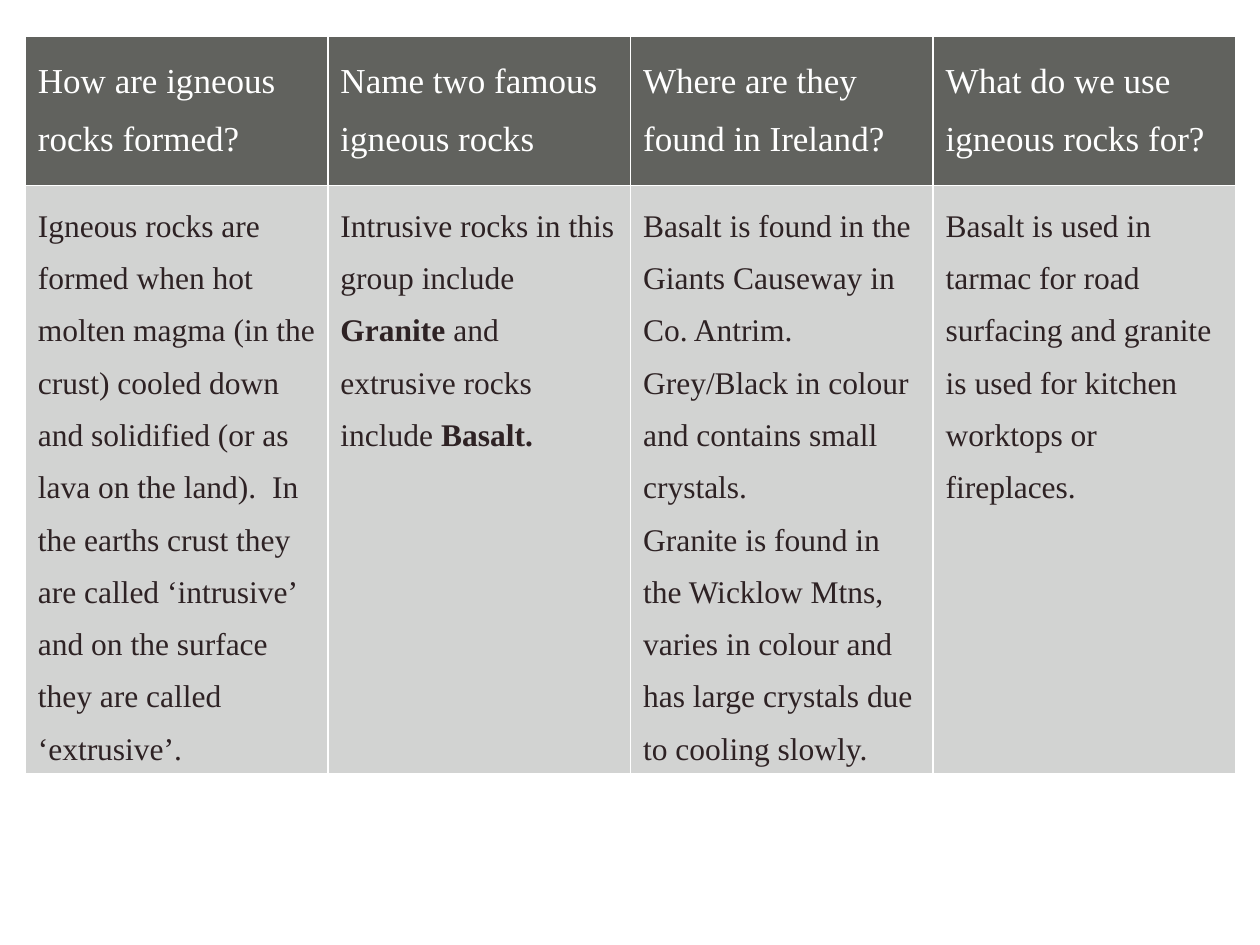
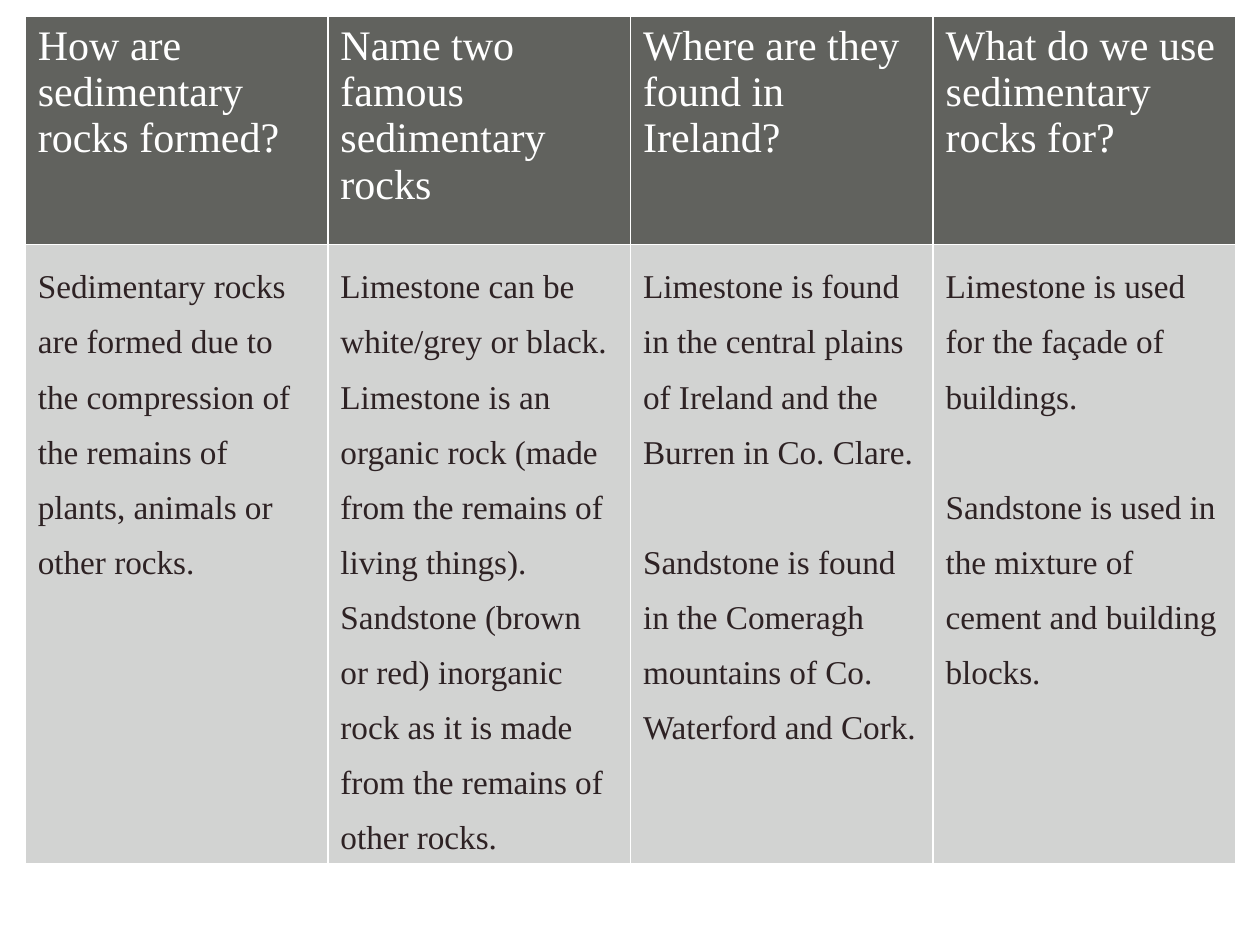
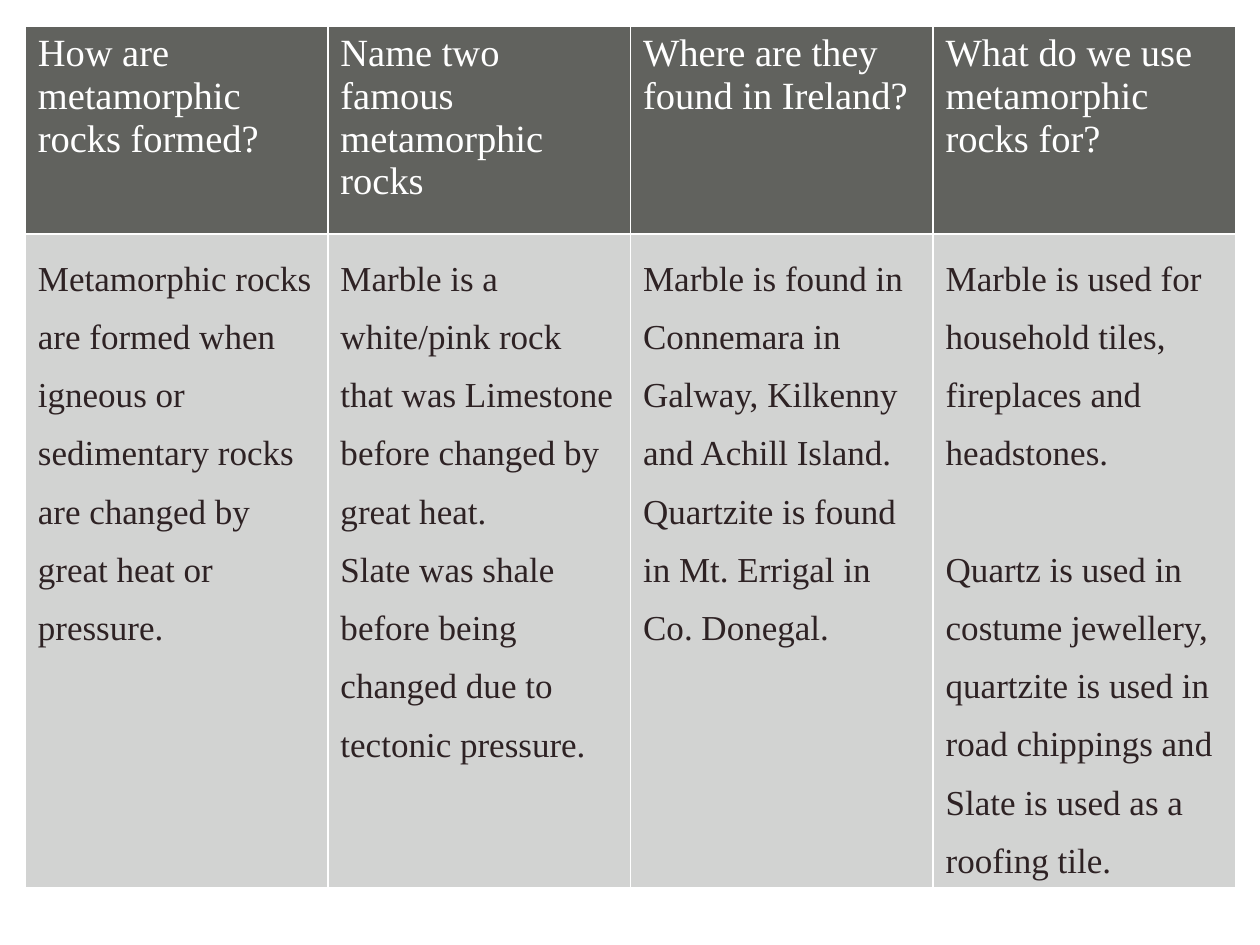
from dataclasses import dataclass

from lxml.etree import SubElement
from pptx import Presentation
from pptx.dml.color import RGBColor as RGB
from pptx.oxml.ns import qn
from pptx.util import Cm, Pt


@dataclass(frozen=True)
class Theme:
    font: str = "Times New Roman"
    head_fill: RGB = RGB(0x61, 0x62, 0x5E)
    head_text: RGB = RGB(0xFF, 0xFF, 0xFF)
    body_fill: RGB = RGB(0xD2, 0xD3, 0xD2)
    body_text: RGB = RGB(0x2E, 0x22, 0x24)
    border: str = "FFFFFF"
    border_pt: float = 1
    body_spacing: float = 1.5
    gap_line: float = 1.66  # height of one skipped line, in type sizes


THEME = Theme()
GAP = "\n"   # starts a paragraph set apart by one line
BOLD = "*"   # encloses bold words
LEFT, COL_W = 0.51, 6.1

# Each rock type: table box and type sizes, then (question, answer paragraphs)
ROCKS = [
    (dict(top=0.74, heights=(3.0, 11.85), sizes=(20, 18), head_spacing=1.5), [
        ("How are igneous rocks formed?",
         ["Igneous rocks are formed when hot molten magma (in the crust) cooled "
          "down and solidified (or as lava on the land).  In the earths crust they "
          "are called ‘intrusive’ and on the surface they are called ‘extrusive’."]),
        ("Name two famous igneous rocks",
         ["Intrusive rocks in this group include *Granite* and extrusive rocks "
          "include *Basalt.*"]),
        ("Where are they found in Ireland?",
         ["Basalt is found in the Giants Causeway in Co. Antrim. Grey/Black in "
          "colour and contains small crystals.",
          "Granite is found in the Wicklow Mtns, varies in colour and has large "
          "crystals due to cooling slowly."]),
        ("What do we use igneous rocks for?",
         ["Basalt is used in tarmac for road surfacing and granite is used for "
          "kitchen worktops or fireplaces."]),
    ]),
    (dict(top=0.33, heights=(4.6, 12.45), sizes=(24, 19)), [
        ("How are sedimentary rocks formed?",
         ["Sedimentary rocks are formed due to the compression of the remains of "
          "plants, animals or other rocks."]),
        ("Name two famous sedimentary rocks",
         ["Limestone can be white/grey or black.  Limestone is an organic rock "
          "(made from the remains of living things).",
          "Sandstone (brown  or red) inorganic rock as it is made from the remains "
          "of other rocks."]),
        ("Where are they found in Ireland?",
         ["Limestone is found in the central plains of Ireland and the Burren in "
          "Co. Clare.",
          GAP + "Sandstone is found in the Comeragh mountains of Co. Waterford and "
          "Cork."]),
        ("What do we use sedimentary rocks for?",
         ["Limestone is used for the façade of buildings.",
          GAP + "Sandstone is used in the mixture of cement and building blocks."]),
    ]),
    (dict(top=0.53, heights=(4.19, 13.16), sizes=(22, 20)), [
        ("How are metamorphic rocks formed?",
         ["Metamorphic rocks are formed when igneous or sedimentary rocks are "
          "changed by great heat or pressure."]),
        ("Name two famous metamorphic rocks",
         ["Marble is a white/pink rock that was Limestone before changed by great "
          "heat.",
          "Slate was shale before being changed due to tectonic pressure."]),
        ("Where are they found in Ireland?",
         ["Marble is found in Connemara in Galway, Kilkenny and Achill Island.",
          "Quartzite is found in Mt. Errigal in Co. Donegal."]),
        ("What do we use metamorphic rocks for?",
         ["Marble is used for household tiles, fireplaces and headstones.",
          GAP + "Quartz is used in costume jewellery, quartzite is used in road "
          "chippings and Slate is used as a roofing tile."]),
    ]),
]


def set_borders(cell):
    """Draw the same thin line on all four sides of a cell."""
    tc_pr = cell._tc.get_or_add_tcPr()
    for side in ("a:lnL", "a:lnR", "a:lnT", "a:lnB"):
        ln = SubElement(tc_pr, qn(side), w=str(Pt(THEME.border_pt)))
        fill = SubElement(ln, qn("a:solidFill"))
        SubElement(fill, qn("a:srgbClr"), val=THEME.border)


def fill_cell(cell, paragraphs, fill, color, size, spacing):
    """Style one cell and write its paragraphs."""
    set_borders(cell)
    cell.fill.solid()
    cell.fill.fore_color.rgb = fill
    tf = cell.text_frame
    for i, text in enumerate(paragraphs):
        p = tf.add_paragraph() if i else tf.paragraphs[0]
        p.line_spacing = spacing
        if text.startswith(GAP):
            p.space_before = Pt(size * THEME.gap_line)
        for j, part in enumerate(text.strip(GAP).split(BOLD)):
            if not part:
                continue
            r = p.add_run()
            r.text = part
            r.font.color.rgb = color
            font_format = dict(name=THEME.font, size=Pt(size), bold=j % 2 == 1)
            for name, value in font_format.items():
                setattr(r.font, name, value)


def add_rock_table(s, columns, top, heights, sizes, head_spacing=1.0):
    """Place a row of questions above a row of answers."""
    table = s.shapes.add_table(2, len(columns), Cm(LEFT), Cm(top),
                               Cm(COL_W * len(columns)), Cm(sum(heights))).table
    for name in ("first_row", "horz_banding"):
        setattr(table, name, False)
    for row, height in zip(table.rows, heights):
        row.height = Cm(height)
    head_size, body_size = sizes
    for c, (question, answer) in enumerate(columns):
        table.columns[c].width = Cm(COL_W)
        fill_cell(table.cell(0, c), [question], THEME.head_fill,
                  THEME.head_text, head_size, head_spacing)
        fill_cell(table.cell(1, c), answer, THEME.body_fill,
                  THEME.body_text, body_size, THEME.body_spacing)


def main():
    prs = Presentation()
    prs.slide_width, prs.slide_height = Cm(25.4), Cm(19.05)
    for box, columns in ROCKS:
        s = prs.slides.add_slide(prs.slide_layouts[6])
        add_rock_table(s, columns, **box)
    prs.save("out.pptx")


if __name__ == "__main__":
    main()
